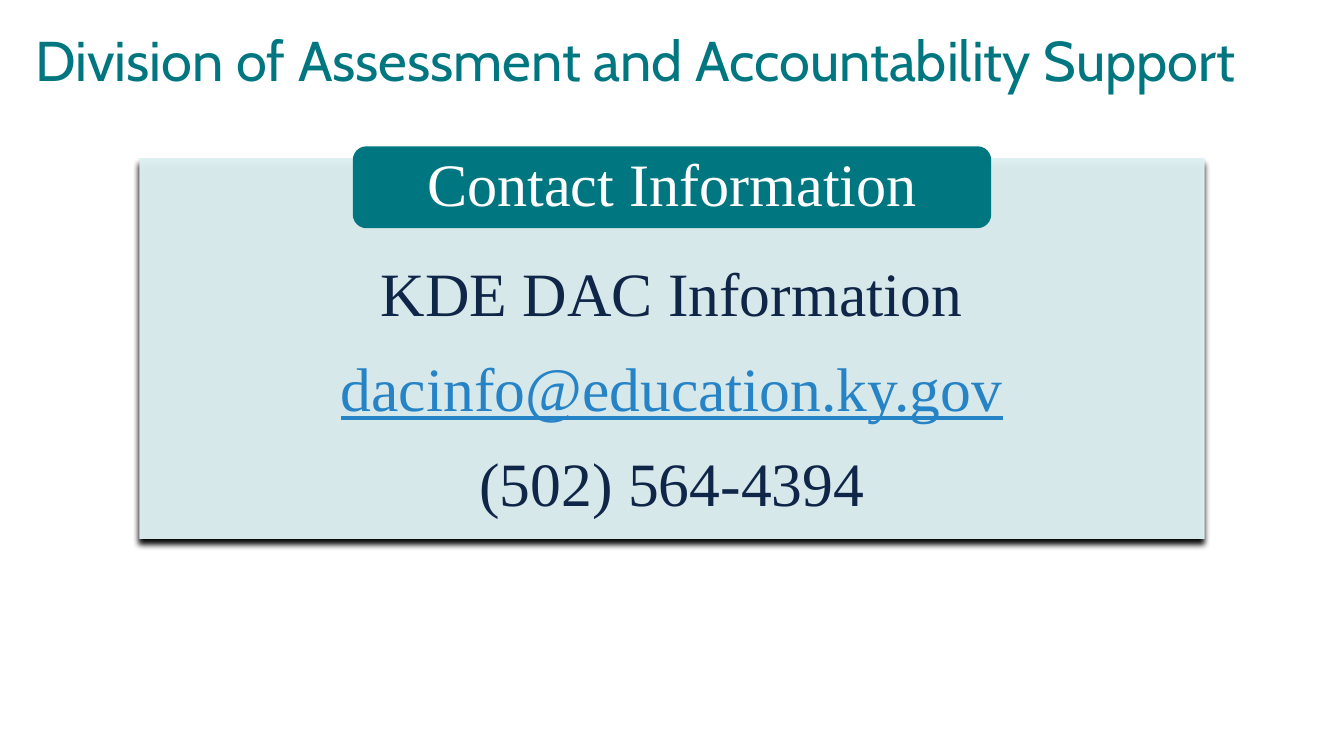
import pptx
import pptx.util
import pptx.dml.color
import pptx.enum.shapes
import pptx.enum.text
import pptx.oxml
import pptx.oxml.ns

Pt = pptx.util.Pt
Shape = pptx.enum.shapes.MSO_SHAPE
Align = pptx.enum.text.PP_ALIGN
Anchor = pptx.enum.text.MSO_ANCHOR

# Content: (text, colour, underlined)
TITLE = [("Division of Assessment and Accountability Support", "007780", False)]
HEADING = [("Contact Information", "FFFFFF", False)]
CONTACT_LINES = [
    ("KDE DAC Information", "102649", False),
    ("dacinfo@education.ky.gov", "2683C6", True),
    ("(502) 564-4394", "102649", False),
]
SLIDE_WIDTH, SLIDE_HEIGHT = 960, 540


def color(hex_value):
    return pptx.dml.color.RGBColor.from_string(hex_value)


def write_lines(shape, lines, font_name, size, align, anchor, margins, gap=0):
    frame = shape.text_frame
    frame.word_wrap = True
    frame.auto_size = pptx.enum.text.MSO_AUTO_SIZE.NONE
    frame.vertical_anchor = anchor
    (frame.margin_left, frame.margin_top,
     frame.margin_right, frame.margin_bottom) = [Pt(margin) for margin in margins]
    frame.text = "\n".join(text for text, _, _ in lines)
    for index, (paragraph, line) in enumerate(zip(frame.paragraphs, lines)):
        paragraph.alignment = align
        paragraph.line_spacing = 0.9
        paragraph.space_before = Pt(gap if index else 0)
        font = paragraph.runs[0].font
        font.name, font.size = font_name, Pt(size)
        font.color.rgb = color(line[1])
        font.underline = line[2]


def add_box(slide, kind, top, width, height, fill):
    """Add a borderless shape centred across the slide."""
    left = (SLIDE_WIDTH - width) / 2
    shape = slide.shapes.add_shape(kind, Pt(left), Pt(top), Pt(width), Pt(height))
    shape.shadow.inherit = False
    shape.fill.solid()
    shape.fill.fore_color.rgb = color(fill)
    shape.line.fill.background()
    return shape


def main():
    presentation = pptx.Presentation()
    presentation.slide_width, presentation.slide_height = Pt(SLIDE_WIDTH), Pt(SLIDE_HEIGHT)
    slide = presentation.slides.add_slide(presentation.slide_layouts[5])

    # Title
    title = slide.shapes.title
    title.left, title.top, title.width, title.height = Pt(0), Pt(0), Pt(SLIDE_WIDTH), Pt(90)
    write_lines(title, TITLE, "Cabin", 40, Align.LEFT, Anchor.MIDDLE, (25.2, 3.6, 7.2, 3.6))

    # Contact panel, slightly transparent with a shadow below
    panel = add_box(slide, Shape.RECTANGLE, 113, 761, 272, "DEF0F2")
    fill_color = panel.fill._xPr.find(".//" + pptx.oxml.ns.qn("a:srgbClr"))
    namespace = pptx.oxml.ns.nsdecls("a")
    fill_color.append(pptx.oxml.parse_xml(f'<a:alpha {namespace} val="97000"/>'))
    effects = panel._element.spPr.find(pptx.oxml.ns.qn("a:effectLst"))
    effects.append(pptx.oxml.parse_xml(
        f'<a:outerShdw {namespace} blurRad="{Pt(4)}" dist="{Pt(4)}" dir="5400000" '
        'rotWithShape="0"><a:srgbClr val="000000"/></a:outerShdw>'))
    write_lines(panel, CONTACT_LINES, "Times New Roman", 44, Align.CENTER, Anchor.TOP,
                (59, 75, 59, 12), gap=20.4)

    # Heading tab over the panel's top edge
    heading = add_box(slide, Shape.ROUNDED_RECTANGLE, 104.5, 456, 58.5, "007780")
    write_lines(heading, HEADING, "Times New Roman", 43, Align.CENTER, Anchor.MIDDLE,
                (20, 0, 20, 0))

    presentation.save("out.pptx")


if __name__ == "__main__":
    main()
